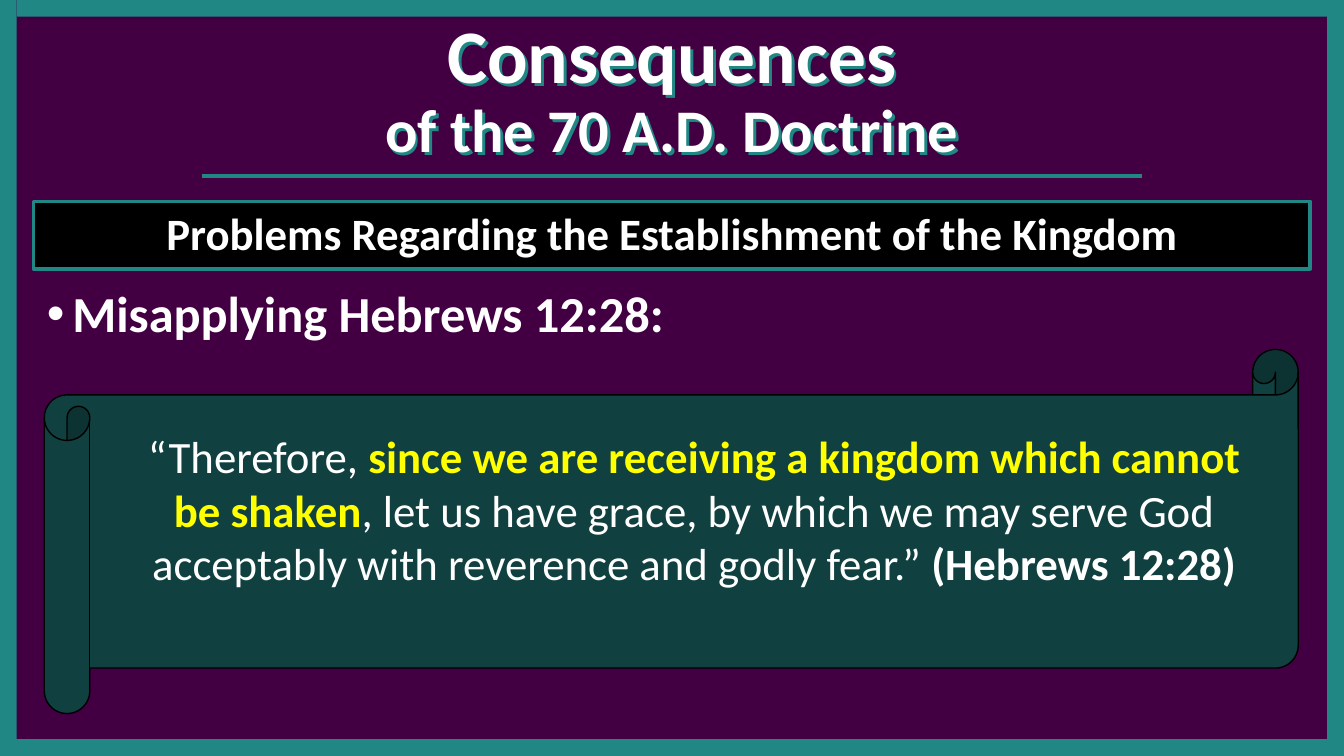
import pptx
import pptx.util
import pptx.dml.color
import pptx.enum.shapes
import pptx.enum.text
import pptx.oxml
import pptx.oxml.ns
from dataclasses import dataclass
from lxml import etree

Inches, Pt = pptx.util.Inches, pptx.util.Pt
RGB = pptx.dml.color.RGBColor.from_string
SHAPE = pptx.enum.shapes.MSO_SHAPE
ALIGN = pptx.enum.text.PP_ALIGN
qn = pptx.oxml.ns.qn


@dataclass(frozen=True)
class Theme:
    font: str = "Calibri"
    back: str = "420042"
    teal: str = "218785"
    scroll: str = "10403F"
    black: str = "000000"
    white: str = "FFFFFF"
    yellow: str = "FFFF00"
    title: float = 40.5
    subtitle: float = 32.4
    bullet: float = 27
    body: float = 24


theme = Theme()


def add_runs(p, runs, size):
    for text, color, bold in runs:
        r = p.add_run()
        r.text = text
        r.font.name = theme.font
        r.font.size = Pt(size)
        r.font.bold = bold
        r.font.color.rgb = RGB(color)


def add_panel(kind, box, fill, line=None, width=0):
    sp = s.shapes.add_shape(kind, *map(Inches, box))
    sp.shadow.inherit = False
    sp.fill.solid()
    sp.fill.fore_color.rgb = RGB(fill)
    if line:
        sp.line.color.rgb = RGB(line)
        sp.line.width = Pt(width)
    else:
        sp.line.fill.background()
    return sp


slide_w = 10
slide_h = slide_w * 9 / 16
edge = slide_h / 45

prs = pptx.Presentation()
prs.slide_width, prs.slide_height = Inches(slide_w), Inches(slide_h)
s = prs.slides.add_slide(prs.slide_layouts[5])
s.background.fill.solid()
s.background.fill.fore_color.rgb = RGB(theme.back)

title = s.shapes.title
title.left, title.top, title.width, title.height = map(Inches, (1.44, edge, 7.12, 1.12))
tf = title.text_frame
tf.word_wrap = True
tf.auto_size = pptx.enum.text.MSO_AUTO_SIZE.NONE
tf.vertical_anchor = pptx.enum.text.MSO_ANCHOR.MIDDLE
p = tf.paragraphs[0]
p.alignment = ALIGN.CENTER
p.line_spacing = 0.9
add_runs(p, [("Consequences", theme.white, True)], theme.title)
p.add_line_break()
etree.SubElement(p._p[-1], qn("a:rPr"), sz=str(int(theme.title * 100)))
add_runs(p, [("of the 70 A.D. Doctrine", theme.white, True)], theme.subtitle)
effects = etree.SubElement(title._element.spPr, qn("a:effectLst"))
shadow = etree.SubElement(effects, qn("a:outerShdw"), dist=str(Pt(2.25)), dir="2700000", algn="tl")
etree.SubElement(shadow, qn("a:srgbClr"), val=theme.teal)

rule = s.shapes.add_connector(
    pptx.enum.shapes.MSO_CONNECTOR.STRAIGHT, Inches(1.5), Inches(1.31), Inches(8.5), Inches(1.31))
rule.line.color.rgb = RGB(theme.teal)
rule.line.width = Pt(2)
etree.SubElement(rule._element.spPr, qn("a:effectLst"))

add_panel(SHAPE.RECTANGLE, (0.25, 1.5, 9.5, 0.5), theme.black, theme.teal, 2)
scroll = add_panel(SHAPE.HORIZONTAL_SCROLL, (0.33, 2.6, 9.33, 2.71), theme.scroll, theme.black, 0.75)
scroll.adjustments[0] = 0.125

heading = [("Problems Regarding the Establishment of the Kingdom", theme.white, True)]
point = [("Misapplying Hebrews 12:28:", theme.white, True)]
verse = [
    ("“Therefore, ", theme.white, False),
    ("since we are receiving a kingdom which cannot be shaken", theme.yellow, True),
    (", let us have grace, by which we may serve God acceptably with reverence and godly fear.” ",
     theme.white, False),
    ("(Hebrews 12:28)", theme.white, True),
]
for box, runs, size, bulleted in [
    ((0.25, 1.48, 9.5, 0.5), heading, theme.body, False),
    ((0.25, 2.1, 9.5, 0.62), point, theme.bullet, True),
    ((0.83, 3.14, 8.67, 1.31), verse, theme.body, False),
]:
    tf = s.shapes.add_textbox(*map(Inches, box)).text_frame
    tf.word_wrap = True
    p = tf.paragraphs[0]
    if bulleted:
        p.line_spacing = 0.9
        pPr = p._p.get_or_add_pPr()
        pPr.set("marL", str(Inches(0.19)))
        pPr.set("indent", str(-Inches(0.19)))
        etree.SubElement(pPr, qn("a:buFont"), typeface="Arial")
        etree.SubElement(pPr, qn("a:buChar"), char="•")
    else:
        p.alignment = ALIGN.CENTER
    add_runs(p, runs, size)

for box in [
    (0, 0, edge, slide_h),
    (slide_w - edge, 0, edge, slide_h),
    (edge, 0, 9.79, edge),
    (0, slide_h - edge, slide_w, edge),
]:
    add_panel(SHAPE.RECTANGLE, box, theme.teal)

prs.save("out.pptx")
